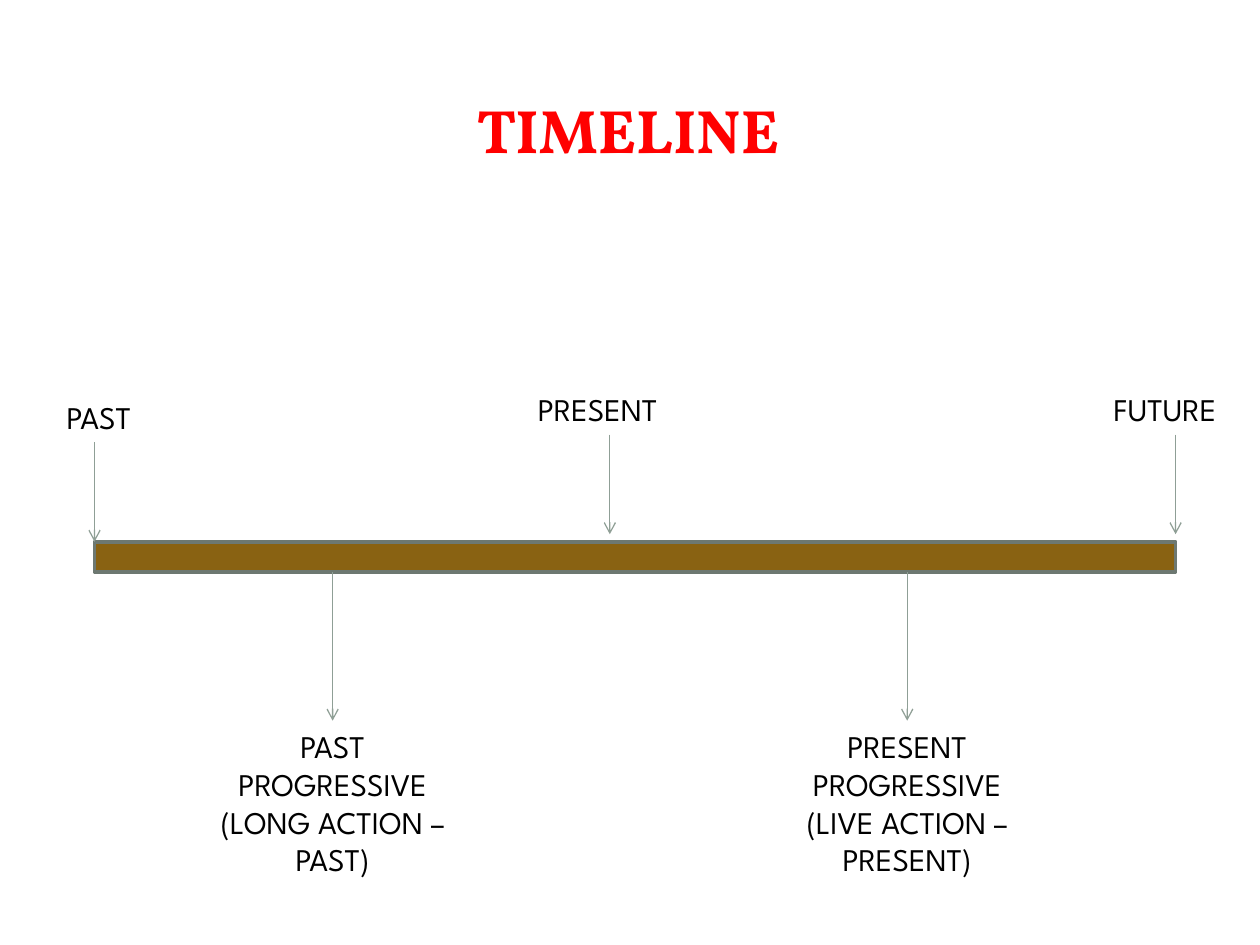
from collections import namedtuple

from lxml import etree
from pptx import Presentation
from pptx import util as u
from pptx.dml.color import RGBColor
from pptx.enum import shapes, text
from pptx.oxml.ns import qn

COLORS = {
    "title": "FF0000",
    "text": "000000",
    "bar": "896212",
    "bar_line": "6D7871",
    "arrow": "8F9F96",
}
FONTS = {"title": "Vollkorn", "text": "League Spartan"}
CELL = u.Inches(0.1)
Box = namedtuple("Box", "left top width height")

PERIODS = [
    ("PAST", 0, 4.7, -3.2, 7.9),
    ("PRESENT", 40.9, 4.1, 34.2, 13.4),
    ("FUTURE", 85.8, 4.1, 79.9, 11.8),
]
TENSES = [
    (["PAST PROGRESSIVE", "(LONG ACTION – PAST)"], 18.9),
    (["PRESENT", "PROGRESSIVE (LIVE ACTION – PRESENT)"], 64.5),
]


def rgb(name):
    """Return the named colour."""
    return RGBColor.from_string(COLORS[name])


def grid(*cells):
    """Convert grid cells to lengths."""
    return [u.Emu(round(cell * CELL)) for cell in cells]


def format_font(p, name, size, bold=False):
    """Apply a font role to a paragraph."""
    p.font.name = FONTS[name]
    p.font.size = u.Pt(size)
    p.font.bold = bold
    p.font.color.rgb = rgb(name)


def add_title(s, box, title):
    """Place the slide title in its box."""
    sp = s.shapes.title
    sp.left, sp.top, sp.width, sp.height = grid(*box)
    tf = sp.text_frame
    tf.text = title
    tf.vertical_anchor = text.MSO_ANCHOR.MIDDLE
    p = tf.paragraphs[0]
    p.alignment = text.PP_ALIGN.CENTER
    format_font(p, "title", 35, bold=True)


def add_label(s, box, lines, align=text.PP_ALIGN.LEFT):
    """Add a wrapped label with line breaks between its lines."""
    tf = s.shapes.add_textbox(*grid(*box)).text_frame
    tf.word_wrap = True
    tf.auto_size = text.MSO_AUTO_SIZE.SHAPE_TO_FIT_TEXT
    p = tf.paragraphs[0]
    p.alignment = align
    for i, line in enumerate(lines):
        if i:
            p.add_line_break()
        r = p.add_run()
        r.text = line
    format_font(p, "text", 18)
    for r in p.runs:
        r.font.size = u.Pt(18)


def add_down_arrow(s, x, top, length):
    """Add a thin vertical arrow pointing down."""
    sp = s.shapes.add_connector(
        shapes.MSO_CONNECTOR.STRAIGHT, *grid(x, top, x, top + length))
    sp.line.color.rgb = rgb("arrow")
    sp.line.width = u.Pt(0.75)
    etree.SubElement(sp.line._get_or_add_ln(), qn("a:tailEnd"), type="arrow")
    etree.SubElement(sp._element.spPr, qn("a:effectLst"))


def add_bar(s, box):
    """Add the timeline bar."""
    sp = s.shapes.add_shape(shapes.MSO_SHAPE.RECTANGLE, *grid(*box))
    sp.shadow.inherit = False
    sp.fill.solid()
    sp.fill.fore_color.rgb = rgb("bar")
    sp.line.color.rgb = rgb("bar_line")
    sp.line.width = u.Pt(2)


def add_timeline(s, box):
    """Place the bar, the periods above it and the tenses below it."""
    bar = Box(box.left, box.top + 12.6, box.width, 2.4)
    add_bar(s, bar)
    for name, x, top, left, width in PERIODS:
        add_down_arrow(s, box.left + x, box.top + top, 7.9)
        add_label(s, Box(box.left + left, box.top + top - 4, width, 4), [name])
    below, length, width = bar.top + bar.height, 11.8, 21.7
    for lines, x in TENSES:
        center = box.left + x
        add_down_arrow(s, center, below, length)
        add_label(s, Box(center - width / 2, below + length, width, 13.1),
                  lines, text.PP_ALIGN.CENTER)


def main():
    """Build and save the timeline slide."""
    prs = Presentation()
    prs.slide_width, prs.slide_height = grid(100, 75)
    s = prs.slides.add_slide(prs.slide_layouts[5])
    add_title(s, Box(4.7, 4.5, 90.3, 11.4), "TIMELINE")
    add_timeline(s, Box(7.5, 30.4, 85.8, 39.9))
    prs.save("out.pptx")


if __name__ == "__main__":
    main()
